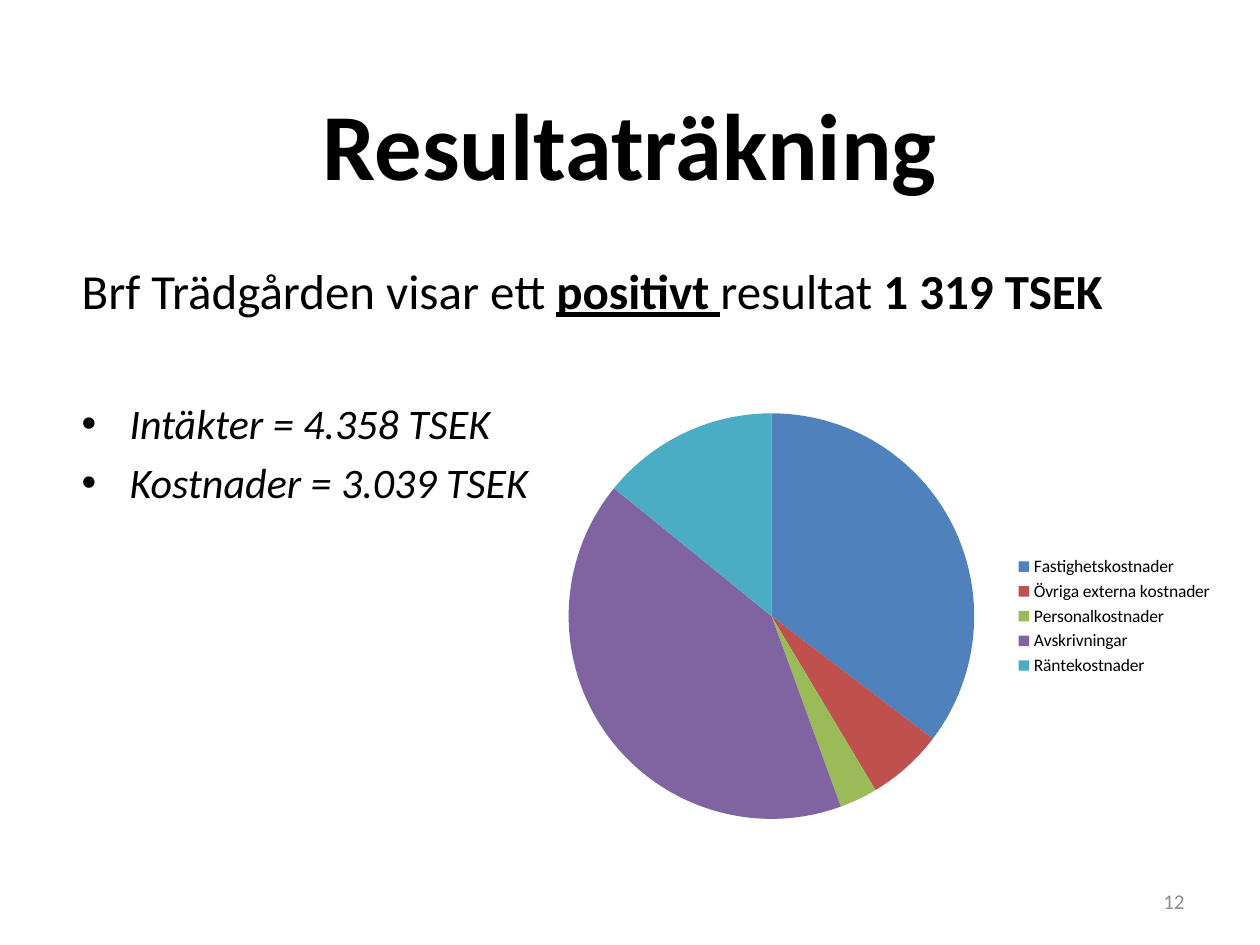
from lxml import etree
from pptx import Presentation
from pptx.chart.data import CategoryChartData
from pptx.dml.color import RGBColor
from pptx.enum.chart import XL_CHART_TYPE as ChartType, XL_LEGEND_POSITION as LegendPosition
from pptx.enum.text import MSO_ANCHOR as Anchor, PP_ALIGN as Align
from pptx.oxml import parse_xml
from pptx.oxml.ns import nsdecls, qn
from pptx.util import Inches, Pt

FONT = "Calibri"
COLORS = {"text": "000000", "number": "8C8C8C"}
COSTS = [
    ("Fastighetskostnader", 35, "4F81BD"),
    ("Övriga externa kostnader", 6, "C0504D"),
    ("Personalkostnader", 3, "9BBB59"),
    ("Avskrivningar", 41, "8064A2"),
    ("Räntekostnader", 14, "4BACC6"),
]


def style_font(font, size, color="text", bold=False, italic=False, underline=False):
    font.name, font.size = FONT, Pt(size)
    font.color.rgb = RGBColor.from_string(COLORS[color])
    font.bold, font.italic, font.underline = bold, italic, underline


def add_run(paragraph, text, size, **style):
    run = paragraph.add_run()
    run.text = text
    style_font(run.font, size, **style)


def add_bullet(paragraph, indent):
    properties = paragraph._p.get_or_add_pPr()
    properties.set("marL", str(indent))
    properties.set("indent", str(-indent))
    etree.SubElement(properties, qn("a:buFont")).set("typeface", "Arial")
    etree.SubElement(properties, qn("a:buChar")).set("char", "•")


def add_text_frame(slide, box):
    frame = slide.shapes.add_textbox(*box).text_frame
    frame.word_wrap = True
    return frame


def place_title(slide, box):
    title = slide.shapes.title
    title.left, title.top, title.width, title.height = box
    title.text_frame.vertical_anchor = Anchor.MIDDLE
    paragraph = title.text_frame.paragraphs[0]
    paragraph.alignment = Align.CENTER
    add_run(paragraph, "Resultaträkning", 54, bold=True)


def add_summary(slide, box):
    frame = add_text_frame(slide, box)
    result = frame.paragraphs[0]
    add_run(result, "Brf Trädgården visar ett ", 28)
    add_run(result, "positivt ", 28, bold=True, underline=True)
    add_run(result, "resultat ", 28)
    add_run(result, "1 319 TSEK", 28, bold=True)
    for text, gap in (("Intäkter = 4.358 TSEK", 44.6), ("Kostnader = 3.039 TSEK", 4.8)):
        paragraph = frame.add_paragraph()
        paragraph.space_before = Pt(gap)
        add_bullet(paragraph, Inches(0.38))
        add_run(paragraph, text, 24, italic=True)


def set_plot_layout(chart, x, y, width, height):
    """Fix the pie's box, in fractions of the chart's size."""
    plot_area = chart._chartSpace.chart.plotArea
    for layout in plot_area.findall(qn("c:layout")):
        plot_area.remove(layout)
    plot_area.insert(0, parse_xml(
        f'<c:layout {nsdecls("c")}><c:manualLayout><c:layoutTarget val="inner"/>'
        '<c:xMode val="edge"/><c:yMode val="edge"/>'
        f'<c:x val="{x}"/><c:y val="{y}"/><c:w val="{width}"/><c:h val="{height}"/>'
        '</c:manualLayout></c:layout>'))


def add_cost_chart(slide, box):
    data = CategoryChartData()
    data.categories = [name for name, _, _ in COSTS]
    data.add_series("Kostnader", [value for _, value, _ in COSTS])
    chart = slide.shapes.add_chart(ChartType.PIE, *box, data).chart
    chart.has_title = False
    style_font(chart.font, 10)
    chart.has_legend = True
    chart.legend.position = LegendPosition.RIGHT
    chart.legend.include_in_layout = False
    plot = chart.plots[0]
    plot.vary_by_categories = True
    for index, (_, _, color) in enumerate(COSTS):
        fill = plot.series[0].points[index].format.fill
        fill.solid()
        fill.fore_color.rgb = RGBColor.from_string(color)
    set_plot_layout(chart, 0.06, 0.04, 0.58, 0.92)


def add_slide_number(slide, box):
    frame = add_text_frame(slide, box)
    frame.vertical_anchor = Anchor.MIDDLE
    paragraph = frame.paragraphs[0]
    paragraph.alignment = Align.RIGHT
    add_run(paragraph, "12", 12, color="number")


def inch_box(*lengths):
    return [Inches(length) for length in lengths]


def main():
    presentation = Presentation()
    presentation.slide_width, presentation.slide_height = Inches(10), Inches(7.5)
    slide = presentation.slides.add_slide(presentation.slide_layouts[5])
    place_title(slide, inch_box(0.5, 0.74, 9, 0.79))
    add_summary(slide, inch_box(0.55, 2.02, 9, 4.96))
    add_slide_number(slide, inch_box(7.17, 6.95, 2.33, 0.4))
    add_cost_chart(slide, inch_box(4.18, 3.14, 5.55, 3.5))
    presentation.save("out.pptx")


if __name__ == "__main__":
    main()
